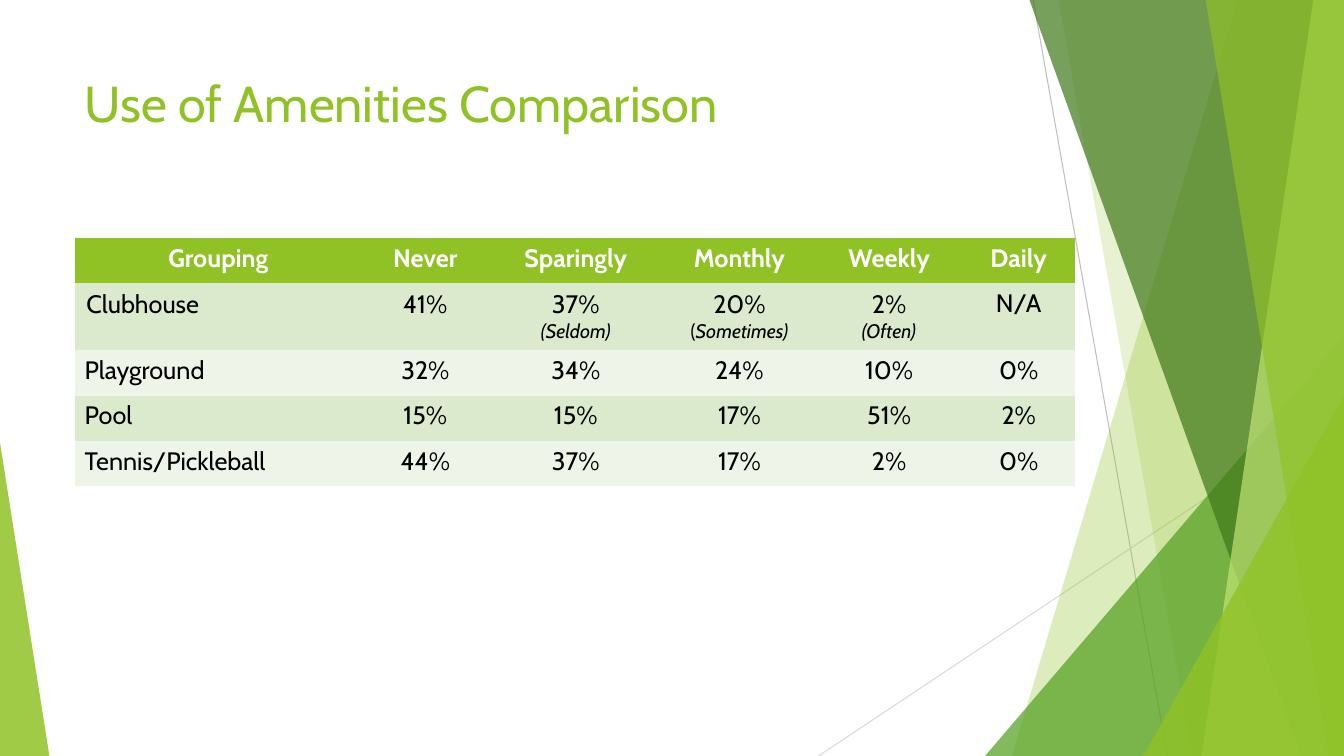
from pptx import Presentation
from pptx.dml.color import RGBColor
from pptx.enum.shapes import MSO_CONNECTOR, MSO_SHAPE
from pptx.enum.text import MSO_ANCHOR, PP_ALIGN
from pptx.oxml.ns import qn
from pptx.util import Pt
from lxml.etree import SubElement

FONT = "Cabin"
WIDTH, HEIGHT = 960, 540
COLORS = {
    "lime": "90C226",
    "green": "54A021",
    "forest": "3F7819",
    "pale": "C0E474",
    "band_dark": "DBE9CD",
    "band_light": "EEF4E8",
    "line_dark": "BFBFBF",
    "line_light": "D9D9D9",
    "white": "FFFFFF",
    "black": "000000",
}
NO_GRID_STYLE = "{2D5ABB26-0587-4C30-8999-92F81FD0307C}"
COLUMN_WIDTHS = [205.2, 90.6, 124.4, 109.4, 104.4, 80.8]
ROW_HEIGHTS = [32.3, 48, 32.3, 32.3, 32.3]
ROWS = [
    ["Grouping", "Never", "Sparingly", "Monthly", "Weekly", "Daily"],
    ["Clubhouse", "41%", "37%", "20%", "2%", "N/A"],
    ["Playground", "32%", "34%", "24%", "10%", "0%"],
    ["Pool", "15%", "15%", "17%", "51%", "2%"],
    ["Tennis/Pickleball", "44%", "37%", "17%", "2%", "0%"],
]
CLUBHOUSE_ROW = 1
CLUBHOUSE_NOTES = {
    2: [("(Seldom)", True)],
    3: [("(", False), ("Sometimes)", True)],
    4: [("(Often)", True)],
}


def rgb(name):
    return RGBColor.from_string(COLORS[name])


def add_text(p, text, size=18, color="black", bold=False, italic=False):
    r = p.add_run()
    r.text = text
    r.font.name = FONT
    r.font.size = Pt(size)
    r.font.bold = bold
    r.font.italic = italic
    r.font.color.rgb = rgb(color)


def paint(sp, color, opacity):
    sp.shadow.inherit = False
    sp.line.fill.background()
    sp.fill.solid()
    sp.fill.fore_color.rgb = rgb(color)
    fill = sp.fill._xPr.find(qn("a:solidFill"))
    SubElement(fill[0], qn("a:alpha")).set("val", str(opacity * 1000))


def add_line(s, x1, y1, x2, y2, color):
    line = s.shapes.add_connector(
        MSO_CONNECTOR.STRAIGHT, Pt(x1), Pt(y1), Pt(x2), Pt(y2))
    line.line.color.rgb = rgb(color)
    line.line.width = Pt(0.75)
    SubElement(line._element.spPr, qn("a:effectLst"))


def add_ribbon(s, top_x, bottom_x, color, opacity):
    builder = s.shapes.build_freeform(Pt(top_x), Pt(-0.7))
    builder.add_line_segments([
        (Pt(WIDTH), Pt(-0.7)),
        (Pt(WIDTH), Pt(HEIGHT)),
        (Pt(bottom_x), Pt(HEIGHT)),
    ])
    paint(builder.convert_to_shape(), color, opacity)


def add_corner(s, left, top, width, apex, color, opacity):
    sp = s.shapes.add_shape(
        MSO_SHAPE.ISOSCELES_TRIANGLE,
        Pt(left), Pt(top), Pt(width), Pt(HEIGHT - top))
    sp.adjustments[0] = apex
    paint(sp, color, opacity)


def add_backdrop(s):
    add_line(s, 738, 0, 833.8, HEIGHT, "line_dark")
    add_line(s, WIDTH, 290.2, 584.6, HEIGHT, "line_light")
    add_ribbon(s, 884.2, 722.9, "lime", 30)
    add_ribbon(s, 756, 851.8, "lime", 20)
    add_corner(s, 703.6, 240, 256.4, 1, "green", 72)
    add_ribbon(s, 735.1, 929.5, "forest", 70)
    add_ribbon(s, 938.2, 858.2, "pale", 70)
    add_ribbon(s, 861.1, 949, "lime", 65)
    add_corner(s, 816.6, 283, 143.4, 1, "lime", 80)
    add_corner(s, 0, 316.1, 35.3, 0, "lime", 85)


def add_title(s, text):
    tf = s.shapes.add_textbox(Pt(53.3), Pt(48), Pt(676.8), Pt(104)).text_frame
    tf.word_wrap = True
    tf.vertical_anchor = MSO_ANCHOR.TOP
    add_text(tf.paragraphs[0], text, size=36, color="lime")


def fill_cell(cell, row, col, text):
    header = row == 0
    band = "band_dark" if row % 2 else "band_light"
    cell.fill.solid()
    cell.fill.fore_color.rgb = rgb("lime" if header else band)
    roomy = row == CLUBHOUSE_ROW and col < 5
    cell.margin_left = cell.margin_right = Pt(8.4 if roomy else 7.2)
    cell.margin_top = cell.margin_bottom = Pt(4.2 if roomy else 3.6)
    align = PP_ALIGN.CENTER if header or col else PP_ALIGN.LEFT
    p = cell.text_frame.paragraphs[0]
    p.alignment = align
    add_text(p, text, color="white" if header else "black", bold=header)
    if row == CLUBHOUSE_ROW and col in CLUBHOUSE_NOTES:
        p = cell.text_frame.add_paragraph()
        p.alignment = align
        for note, italic in CLUBHOUSE_NOTES[col]:
            add_text(p, note, size=14, italic=italic)


def add_usage_table(s):
    table = s.shapes.add_table(
        len(ROWS), len(COLUMN_WIDTHS), Pt(53.3), Pt(170),
        Pt(sum(COLUMN_WIDTHS)), Pt(sum(ROW_HEIGHTS))).table
    table._tbl.tblPr.find(qn("a:tableStyleId")).text = NO_GRID_STYLE
    table.horz_banding = False
    for column, width in zip(table.columns, COLUMN_WIDTHS):
        column.width = Pt(width)
    for i, (height, values) in enumerate(zip(ROW_HEIGHTS, ROWS)):
        table.rows[i].height = Pt(height)
        for j, text in enumerate(values):
            fill_cell(table.cell(i, j), i, j, text)


def main():
    prs = Presentation()
    prs.slide_width, prs.slide_height = Pt(WIDTH), Pt(HEIGHT)
    s = prs.slides.add_slide(prs.slide_layouts[6])
    add_backdrop(s)
    add_title(s, "Use of Amenities Comparison")
    add_usage_table(s)
    prs.save("out.pptx")


if __name__ == "__main__":
    main()
